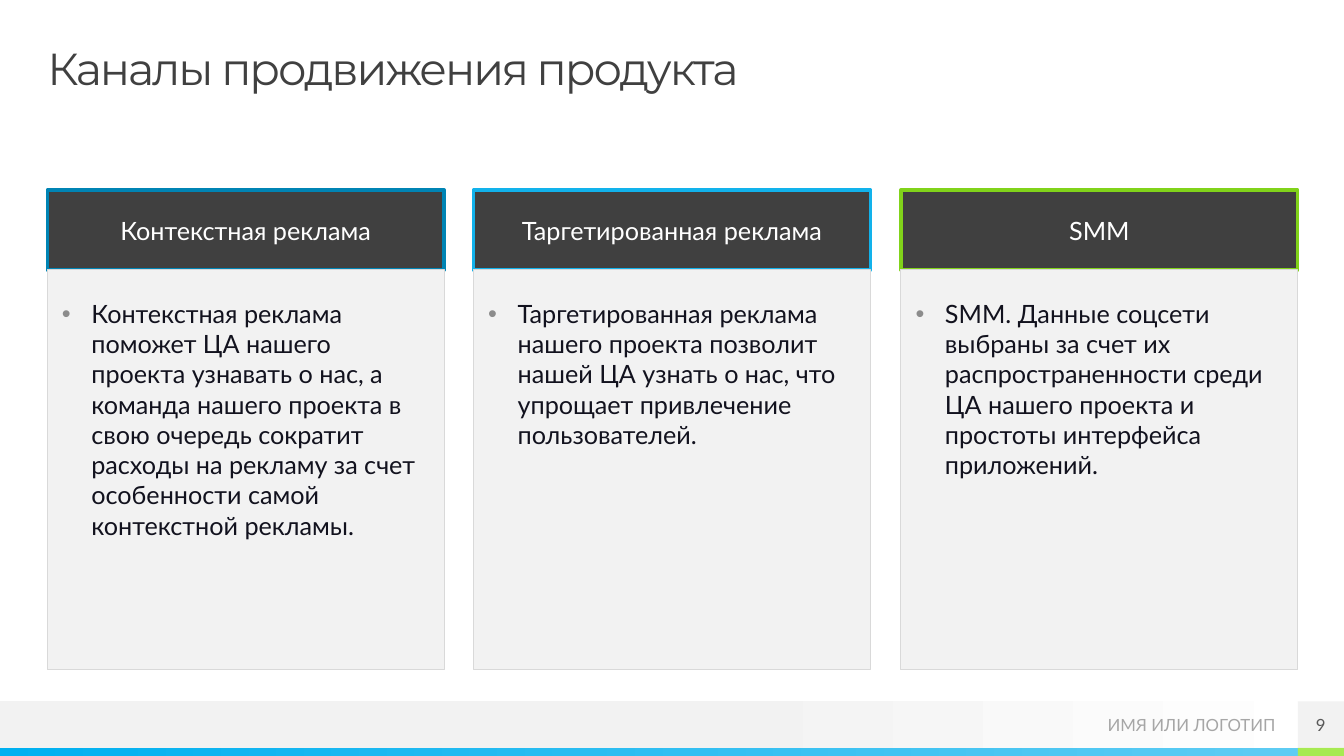
from dataclasses import dataclass

from lxml import etree
from pptx import Presentation
from pptx.dml.color import RGBColor
from pptx.enum.shapes import MSO_SHAPE
from pptx.enum.text import MSO_ANCHOR, MSO_AUTO_SIZE, PP_ALIGN
from pptx.oxml.ns import qn
from pptx.util import Pt

RECTANGLE = MSO_SHAPE.RECTANGLE
TOP, MIDDLE = MSO_ANCHOR.TOP, MSO_ANCHOR.MIDDLE
LEFT, CENTER, RIGHT = PP_ALIGN.LEFT, PP_ALIGN.CENTER, PP_ALIGN.RIGHT
NO_AUTOFIT = MSO_AUTO_SIZE.NONE

PX = 9525  # EMU per px, 96 px to the inch


@dataclass(frozen=True)
class Theme:
    title_font: str = "Montserrat"
    text_font: str = "Lato"
    title_size: int = 32
    text_size: int = 18
    footer_size: int = 12
    dark: str = "404040"
    text: str = "12121E"
    white: str = "FFFFFF"
    panel: str = "F2F2F2"
    panel_line: str = "D9D9D9"
    bullet: str = "8C8C8C"
    logo: str = "A6A6A6"
    number: str = "595959"
    strip_start: str = "00B0F0"
    strip_end: str = "5ECCF3"
    strip_accent: str = "A7EA52"


THEME = Theme()

CHANNELS = [
    ("Контекстная реклама", "0084B4",
     "Контекстная реклама поможет ЦА нашего проекта узнавать о нас, а команда "
     "нашего проекта в свою очередь сократит расходы на рекламу за счет "
     "особенности самой контекстной рекламы."),
    ("Таргетированная реклама", "12B2EB",
     "Таргетированная реклама нашего проекта позволит нашей ЦА узнать о нас, "
     "что упрощает привлечение пользователей."),
    ("SMM", "81D31A",
     "SMM. Данные соцсети выбраны за счет их распространенности среди ЦА "
     "нашего проекта и простоты интерфейса приложений."),
]


def place(shape, left, top, width, height):
    shape.left, shape.top = left * PX, top * PX
    shape.width, shape.height = width * PX, height * PX


def write(shape, text, size, color, align, anchor=MIDDLE,
          insets=(0, 0, 0, 0), font_name=THEME.text_font):
    """Fill the shape with one formatted paragraph and return it."""
    frame = shape.text_frame
    frame.word_wrap = True
    frame.auto_size = NO_AUTOFIT
    frame.vertical_anchor = anchor
    (frame.margin_left, frame.margin_top,
     frame.margin_right, frame.margin_bottom) = [inset * PX for inset in insets]
    paragraph = frame.paragraphs[0]
    paragraph.text = text
    paragraph.alignment = align
    paragraph.font.name = font_name
    paragraph.font.size = Pt(size)
    paragraph.font.bold = False
    paragraph.font.color.rgb = RGBColor.from_string(color)
    return paragraph


presentation = Presentation()
presentation.slide_width, presentation.slide_height = 1280 * PX, 720 * PX
slide = presentation.slides.add_slide(presentation.slide_layouts.get_by_name("Comparison"))
shapes = slide.shapes

# Footer band, colour strip and page number
band, strip, strip_accent, number_box = [
    shapes.add_shape(RECTANGLE, 0, 0, PX, PX) for _ in range(4)]
place(band, 0, 668, 1280, 44)
place(strip, 0, 712, 1236, 8)
place(strip_accent, 1236, 712, 44, 8)
place(number_box, 1236, 668, 44, 44)
for bar in (band, strip, strip_accent, number_box):
    bar.shadow.inherit = False
    bar.line.fill.background()

for bar, stops in (
    (band, [(0.53, THEME.panel), (1, THEME.white)]),
    (strip, [(0, THEME.strip_start), (1, THEME.strip_end)]),
):
    bar.fill.gradient()
    bar.fill.gradient_angle = 0
    for stop, (position, color) in zip(bar.fill.gradient_stops, stops):
        stop.position = position
        stop.color.rgb = RGBColor.from_string(color)

for bar, color in ((strip_accent, THEME.strip_accent), (number_box, THEME.panel)):
    bar.fill.solid()
    bar.fill.fore_color.rgb = RGBColor.from_string(color)
write(number_box, "9", THEME.footer_size, THEME.number, CENTER)

logo_text = shapes.add_textbox(1000 * PX, 668 * PX, 215 * PX, 45 * PX)
write(logo_text, "ИМЯ ИЛИ ЛОГОТИП", THEME.footer_size, THEME.logo, RIGHT)

# Title
title = shapes.title
place(title, 45, 45, 1190, 45)
title_paragraph = write(title, "Каналы продвижения продукта", THEME.title_size,
                        THEME.dark, LEFT, TOP, font_name=THEME.title_font)
title_paragraph.line_spacing = 0.9
title_paragraph.runs[0]._r.get_or_add_rPr().set("spc", "-150")

# Columns: the layout holds two pairs of placeholders, the third pair is shapes
boxes = [slide.placeholders[index] for index in (1, 2, 3, 4)]
for _ in range(2):
    box = shapes.add_shape(RECTANGLE, 0, 0, PX, PX)
    box.shadow.inherit = False
    boxes.append(box)

for column, (name, accent, description) in enumerate(CHANNELS):
    header, panel = boxes[2 * column:2 * column + 2]
    left = 45 + column * 813 // 2
    place(header, left, 181, 378, 76)
    place(panel, left, 257, 378, 381)

    properties = panel.text_frame.paragraphs[0]._p.get_or_add_pPr()
    properties.set("marL", str(28 * PX))
    properties.set("indent", str(-28 * PX))
    bullet_color = etree.SubElement(properties, qn("a:buClr"))
    etree.SubElement(bullet_color, qn("a:srgbClr"), val=THEME.bullet)
    etree.SubElement(properties, qn("a:buFont"), typeface="Arial")
    etree.SubElement(properties, qn("a:buChar"), char="•")

    paragraphs = [
        write(header, name, THEME.text_size, THEME.white, CENTER,
              insets=(12, 4, 12, 4)),
        write(panel, description, THEME.text_size, THEME.text, LEFT, TOP,
              insets=(14, 27, 14, 0)),
    ]
    for paragraph in paragraphs:
        paragraph.space_before, paragraph.space_after = Pt(10), Pt(5)

    for box, fill, line, line_width in (
        (header, THEME.dark, accent, 2.5),
        (panel, THEME.panel, THEME.panel_line, 0.75),
    ):
        box.fill.solid()
        box.fill.fore_color.rgb = RGBColor.from_string(fill)
        box.line.color.rgb = RGBColor.from_string(line)
        box.line.width = Pt(line_width)

presentation.save("out.pptx")
